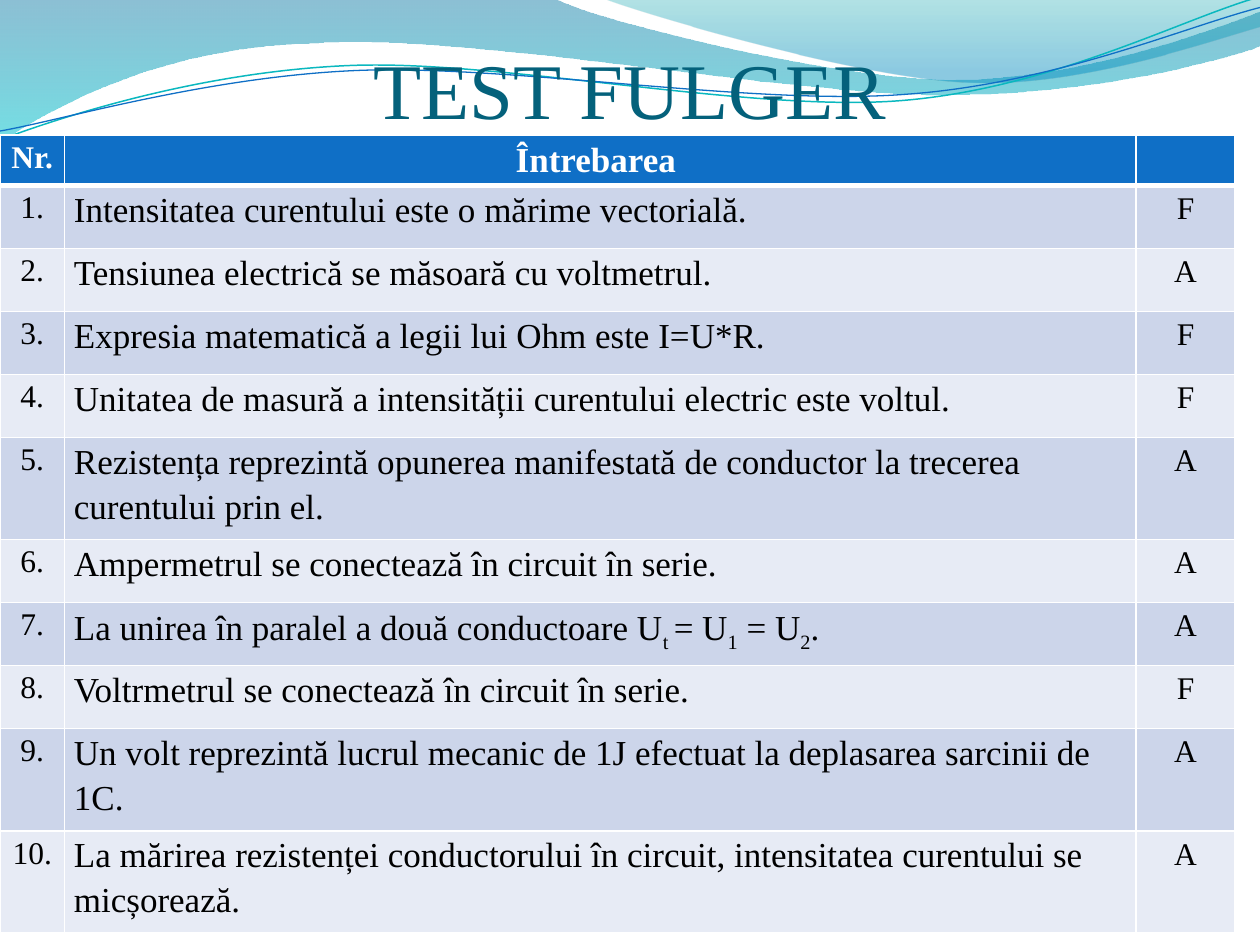
from math import cos, radians, sin

from lxml.etree import SubElement
from pptx import Presentation
from pptx.dml.color import RGBColor as Rgb
from pptx.enum.text import MSO_ANCHOR as Anchor, PP_ALIGN as Align
from pptx.oxml.ns import qn
from pptx.util import Cm, Pt

FONT = "Times New Roman"
COLORS = {
    "title": "04617B", "header": "0F6FC6", "odd": "CCD5EA", "even": "E7EBF5",
    "text": "000000", "white": "FFFFFF", "teal": "0AB8BF", "blue": "0F6FC6",
}
TITLE = "TEST FULGER"
HEADER = ("Nr.", "Întrebarea ", "")
QUESTIONS = [
    ("Intensitatea curentului este o mărime vectorială.", "F"),
    ("Tensiunea electrică se măsoară cu voltmetrul.", "A"),
    ("Expresia matematică a legii lui Ohm este I=U*R.", "F"),
    ("Unitatea de masură a intensității curentului electric este voltul.", "F"),
    ("Rezistența reprezintă opunerea manifestată de conductor la trecerea curentului prin el.", "A"),
    ("Ampermetrul se conectează în circuit în serie.", "A"),
    ("La unirea în paralel a două conductoare U|t |= U|1| = U|2|.", "A"),
    ("Voltrmetrul se conectează în circuit în serie.", "F"),
    ("Un volt reprezintă lucrul mecanic de 1J efectuat la deplasarea sarcinii de 1C.", "A"),
    ("La mărirea rezistenței conductorului în circuit, intensitatea curentului se micșorează.", "A"),
]
COLUMN_WIDTHS = (1.3, 21.6, 2.0)
HEADER_HEIGHT, ONE_LINE, TWO_LINES = 0.99, 1.27, 2.06
LINE_LIMIT = 70

WAVES = [
    ([(0, 0), (4.4, -0.01),
      (4.76, 0.17, 6.64, 0.63, 7.58, 0.63), (8.53, 0.63, 9.58, 0.26, 10, 0.09),
      (10.01, 0.36),
      (9.83, 0.44, 8.7, 0.76, 7.46, 0.75), (6.22, 0.75, 3.82, 0.28, 2.57, 0.34),
      (1.29, 0.36, 0.46, 0.83, -0.01, 1.13), (0, 0)],
     [(0, "0074A1", 45), (1, "00C6CF", 55)]),
    ([(4.79, -0.01),
      (5.09, 0.11, 6.82, 0.62, 7.69, 0.65), (8.56, 0.69, 9.61, 0.32, 10, 0.21),
      (10, 0), (4.79, -0.01)],
     [(0, "00A1A9", 30), (0.8, "008BBF", 45)]),
]
STRANDS = [
    ([(0, 1.11), (0.48, 0.93, 1.58, 0.57, 2.77, 0.52),
      (3.95, 0.47, 5.93, 0.89, 7.13, 0.8), (8.33, 0.71, 9.38, 0.15, 9.98, -0.02)],
     (4.99, 0.58), "teal", 0.85),
    ([(0, 1.04), (0.47, 0.96, 1.64, 0.61, 2.83, 0.56),
      (4.03, 0.51, 5.97, 0.84, 7.17, 0.75), (8.36, 0.67, 9.41, 0.21, 10, 0.06)],
     (5, 0.59), "blue", 0.75),
]
STRAND_TILT = -2.7


def color(name):
    return Rgb.from_string(COLORS[name])


def turn(step, center, degrees):
    cx, cy = center
    c, s = cos(radians(degrees)), sin(radians(degrees))
    turned = []
    for x, y in zip(step[::2], step[1::2]):
        dx, dy = x - cx, y - cy
        turned += [cx + dx * c - dy * s, cy + dx * s + dy * c]
    return turned


def draw_outline(slide, steps, close):
    points = [(Cm(2.54 * x), Cm(2.54 * y))
              for step in steps for x, y in zip(step[::2], step[1::2])]
    builder = slide.shapes.build_freeform(*points[0])
    builder.add_line_segments(points[1:], close=close)
    outline = builder.convert_to_shape()
    outline.shadow.inherit = False
    segments = iter(list(outline._element.iter(qn("a:lnTo"))))
    for step in steps[1:]:
        segment = next(segments)
        if len(step) == 6:
            segment.addprevious(curve := SubElement(segment.getparent(), qn("a:cubicBezTo")))
            for part in (segment, next(segments), next(segments)):
                curve.append(part[0])
                part.getparent().remove(part)
    return outline


def add_wave(slide, steps, stops):
    wave = draw_outline(slide, steps, True)
    wave.line.fill.background()
    wave.fill.gradient()
    wave.fill.gradient_angle = 270
    for stop, (position, shade, _) in zip(wave.fill.gradient_stops, stops):
        stop.position = position
        stop.color.rgb = Rgb.from_string(shade)
    shades = wave._element.spPr.iter(qn("a:srgbClr"))
    for shade, (_, _, opacity) in zip(list(shades), stops):
        SubElement(shade, qn("a:alpha"), val=str(opacity * 1000))


def add_strand(slide, steps, center, shade, width):
    level = [turn(step, center, -STRAND_TILT) for step in steps]
    strand = draw_outline(slide, level, False)
    strand.rotation = STRAND_TILT
    strand.fill.background()
    strand.line.color.rgb = color(shade)
    strand.line.width = Pt(width)


def style_runs(paragraph, size, shade, bold=False):
    for run in paragraph.runs:
        run.font.name = FONT
        run.font.size = Pt(size)
        run.font.bold = bold
        run.font.color.rgb = color(shade)


def add_title(slide):
    frame = slide.shapes.add_textbox(Cm(1.27), Cm(0.52), Cm(22.86), Cm(2.21)).text_frame
    frame.word_wrap = True
    frame.vertical_anchor = Anchor.BOTTOM
    frame.margin_left = frame.margin_right = frame.margin_bottom = 0
    frame.text = TITLE
    frame.paragraphs[0].alignment = Align.CENTER
    style_runs(frame.paragraphs[0], 45, "title")


def add_borders(cell, row):
    for side in "LRB" if row == 1 else "LRTB":
        width = 3 if row == 0 and side == "B" else 1
        border = SubElement(cell._tc.get_or_add_tcPr(), qn(f"a:ln{side}"),
                            w=str(Pt(width)))
        paint = SubElement(border, qn("a:solidFill"))
        SubElement(paint, qn("a:srgbClr"), val=COLORS["white"])


def fill_cell(cell, row, column, text):
    is_header = row == 0
    add_borders(cell, row)
    cell.fill.solid()
    cell.fill.fore_color.rgb = color("header" if is_header else "odd" if row % 2 else "even")
    paragraph = cell.text_frame.paragraphs[0]
    for i, piece in enumerate(text.split("|") if text else []):
        run = paragraph.add_run()
        run.text = piece
        if i % 2:
            run.font._element.set("baseline", "-25000")
    is_question = column == 1
    paragraph.alignment = Align.LEFT if is_question and not is_header else Align.CENTER
    if column < 2:
        cell.margin_left = cell.margin_right = Cm(0.19)
        cell.margin_top = cell.margin_bottom = 0
        paragraph.line_spacing = 1.15
    style_runs(paragraph, 20 if is_question else 18,
               "white" if is_header else "text", is_header)


def add_quiz(slide):
    rows = [HEADER] + [(f"{n}.", *entry) for n, entry in enumerate(QUESTIONS, 1)]
    heights = [HEADER_HEIGHT] + [TWO_LINES if len(question) > LINE_LIMIT else ONE_LINE
                                 for question, _ in QUESTIONS]
    quiz = slide.shapes.add_table(len(rows), len(HEADER), 0, Cm(2.72),
                                  Cm(sum(COLUMN_WIDTHS)), Cm(sum(heights))).table
    for column, width in zip(quiz.columns, COLUMN_WIDTHS):
        column.width = Cm(width)
    for r, (texts, height) in enumerate(zip(rows, heights)):
        quiz.rows[r].height = Cm(height)
        for c, text in enumerate(texts):
            fill_cell(quiz.cell(r, c), r, c, text)
    quiz.cell(0, 2).text_frame.paragraphs[0].font.size = Pt(18)


def main():
    deck = Presentation()
    deck.slide_width, deck.slide_height = Cm(25.4), Cm(19.05)
    slide = deck.slides.add_slide(deck.slide_layouts[6])
    for wave in WAVES:
        add_wave(slide, *wave)
    for strand in STRANDS:
        add_strand(slide, *strand)
    add_title(slide)
    add_quiz(slide)
    deck.save("out.pptx")


if __name__ == "__main__":
    main()
